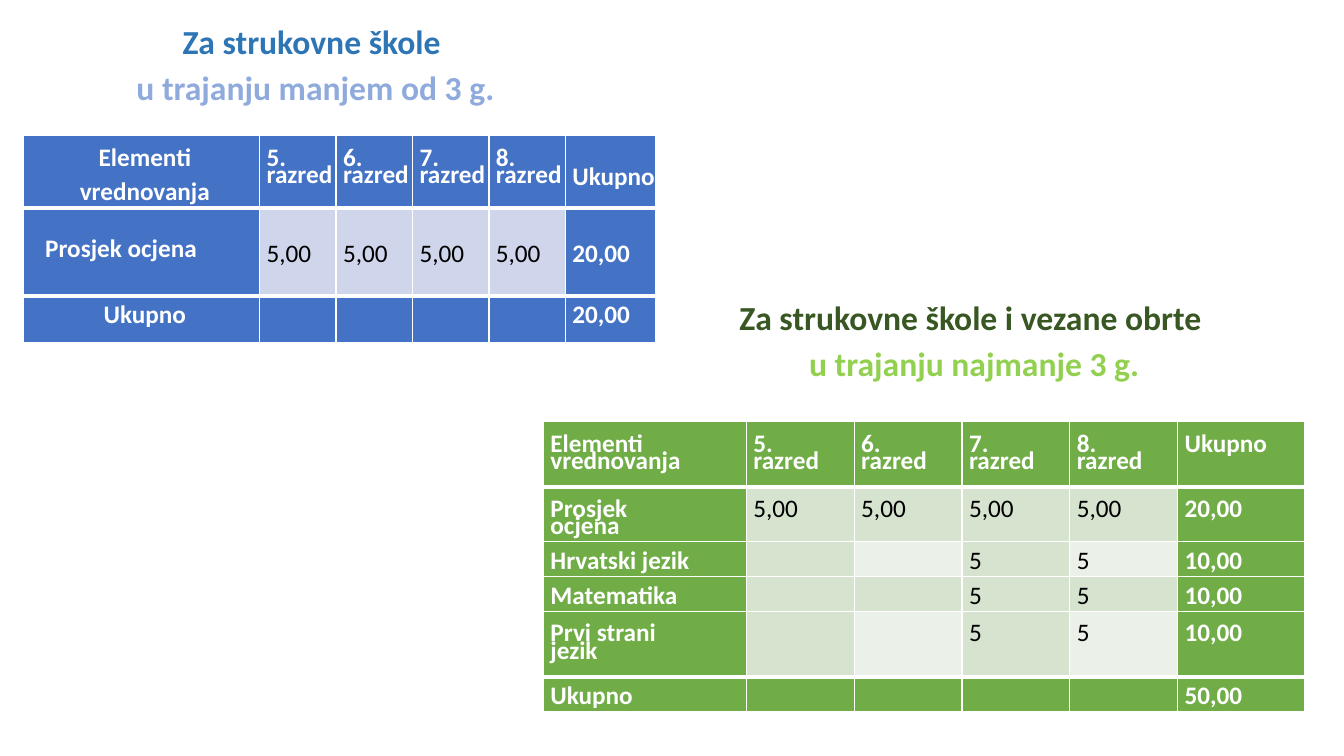
import pptx
import pptx.dml.color
import pptx.enum.text
import pptx.oxml.ns
import pptx.util
from dataclasses import dataclass
from lxml import etree

Pt = pptx.util.Pt
RGB = pptx.dml.color.RGBColor.from_string
ALIGN = pptx.enum.text.PP_ALIGN
ANCHOR = pptx.enum.text.MSO_ANCHOR
AUTOSIZE = pptx.enum.text.MSO_AUTO_SIZE
qn = pptx.oxml.ns.qn


@dataclass(frozen=True)
class Theme:
    font: str = "Calibri"
    heading_size: float = 24
    table_size: float = 18
    white: str = "FFFFFF"
    black: str = "000000"
    blue: str = "4472C4"
    blue_tint: str = "CFD5EA"
    blue_title: str = "2E75B6"
    blue_subtitle: str = "8FAADC"
    green: str = "70AD47"
    green_tint: str = "D5E3CF"
    green_pale: str = "EBF1E9"
    green_title: str = "385723"
    green_subtitle: str = "92D050"
    thin: float = 1
    thick: float = 3
    indent: float = 5
    line: float = 12.4


T = Theme()
GRADES = [f"{n}.\nrazred" for n in range(5, 9)]


def set_format(obj, values):
    for name, value in values.items():
        setattr(obj, name, value)


def add_run(p, text, size, color, bold=True):
    r = p.add_run()
    r.text = text
    set_format(r.font, {"name": T.font, "size": Pt(size), "bold": bold})
    r.font.color.rgb = RGB(color)


def fill_heading(sp, box, lines):
    """Place a body placeholder and write its (text, colour) lines."""
    set_format(sp, dict(zip(("left", "top", "width", "height"), map(Pt, box))))
    tf = sp.text_frame
    set_format(tf, {"vertical_anchor": ANCHOR.BOTTOM, "word_wrap": True,
                    "auto_size": AUTOSIZE.NONE})
    for i, (text, color) in enumerate(lines):
        p = tf.add_paragraph() if i else tf.paragraphs[0]
        set_format(p, {"alignment": ALIGN.CENTER, "line_spacing": 0.8,
                       "space_before": Pt(10)})
        add_run(p, text, T.heading_size, color)


def set_borders(cell, top, bottom):
    tcPr = cell._tc.get_or_add_tcPr()
    widths = {"a:lnL": T.thin, "a:lnR": T.thin, "a:lnT": top, "a:lnB": bottom}
    for i, (tag, width) in enumerate(widths.items()):
        ln = etree.Element(qn(tag), w=str(int(Pt(width))))
        solid = etree.SubElement(ln, qn("a:solidFill"))
        etree.SubElement(solid, qn("a:srgbClr"), val=T.white)
        tcPr.insert(i, ln)


def fill_cell(cell, text, color, bold, line, top=None, gap=0, right=0, align=ALIGN.LEFT):
    """Write the lines of a cell; line=None means single spacing."""
    set_format(cell, {"margin_left": Pt(T.indent), "margin_right": Pt(right),
                      "margin_top": Pt((top or line) if text else 0),
                      "margin_bottom": 0})
    if not text:
        return
    tf = cell.text_frame
    for i, part in enumerate(text.split("\n")):
        p = tf.add_paragraph() if i else tf.paragraphs[0]
        p.alignment = align
        spacing = T.line if i else line
        if spacing:
            p.line_spacing = Pt(spacing)
        if i and gap:
            p.space_before = Pt(gap)
        add_run(p, part, T.table_size, color, bold)


def add_score_table(s, left, top, cols, rows, main, tints, special):
    """rows holds (height, line spacing, texts); special holds cell overrides."""
    frame = s.shapes.add_table(len(rows), len(cols), Pt(left), Pt(top),
                               Pt(sum(cols)), Pt(sum(row[0] for row in rows)))
    table = frame.table
    set_format(table, {"first_row": True, "horz_banding": False})
    for column, width in zip(table.columns, cols):
        column.width = Pt(width)
    last_row, last_col = len(rows) - 1, len(cols) - 1
    for i, (height, line, texts) in enumerate(rows):
        table.rows[i].height = Pt(height)
        for j, text in enumerate(texts):
            cell = table.cell(i, j)
            inner = 0 < i < last_row and 0 < j < last_col
            # Even columns of even rows take the second tint
            pale = i % 2 == 0 and j % 2 == 0
            cell.fill.solid()
            cell.fill.fore_color.rgb = RGB(tints[pale] if inner else main)
            set_borders(cell, T.thick if i in (1, last_row) else T.thin,
                        T.thick if i in (0, last_row - 1) else T.thin)
            fmt = {"color": T.black if inner else T.white,
                   "bold": not inner, "line": line}
            fill_cell(cell, text, **{**fmt, **special.get((i, j), {})})


def main():
    prs = pptx.Presentation()
    set_format(prs, {"slide_width": Pt(960), "slide_height": Pt(540)})
    s = prs.slides.add_slide(prs.slide_layouts[4])
    holders = {sp.placeholder_format.idx: sp for sp in s.placeholders}

    # Headings use the two caption placeholders of the comparison layout
    fill_heading(holders[1], (22.3, 15.1, 406, 64.8),
                 [("Za strukovne škole ", T.blue_title),
                  ("u trajanju manjem od 3 g.", T.blue_subtitle)])
    fill_heading(holders[3], (491.8, 212.4, 408.2, 64.8),
                 [("Za strukovne škole i vezane obrte ", T.green_title),
                  ("u trajanju najmanje 3 g.", T.green_subtitle)])
    for idx in (0, 2, 4):
        holders[idx].element.getparent().remove(holders[idx].element)

    # Schools shorter than three years
    centred = {"align": ALIGN.CENTER}
    add_score_table(
        s, 16.5, 96.8, [169] + [54.6] * 4 + [64.2],
        [(51.6, 13.4, ["Elementi\nvrednovanja", *GRADES, "Ukupno"]),
         (63, None, ["Prosjek ocjena", *["5,00"] * 4, "20,00"]),
         (33.5, T.line, ["Ukupno", *[""] * 4, "20,00"])],
        T.blue, (T.blue_tint, T.blue_tint),
        {(0, 0): {**centred, "gap": T.line},
         (0, 5): {"top": 26.8},
         (1, 0): {**centred, "line": 13.5, "top": 27, "right": 34},
         **{(1, j): {"top": 22} for j in range(1, 6)},
         (2, 0): centred})

    # Schools of at least three years
    subject = ["", "", "5", "5", "10,00"]
    add_score_table(
        s, 388.2, 301, [145] + [77] * 4 + [90.7],
        [(46.8, 13.4, ["Elementi\nvrednovanja", *GRADES, "Ukupno"]),
         (39.2, 13.3, ["Prosjek\nocjena", *["5,00"] * 4, "20,00"]),
         (24.8, T.line, ["Hrvatski jezik", *subject]),
         (24.8, T.line, ["Matematika", *subject]),
         (46.8, 13.4, ["Prvi strani\njezik", *subject]),
         (24.8, T.line, ["Ukupno", *[""] * 4, "50,00"])],
        T.green, (T.green_tint, T.green_pale), {})

    prs.save("out.pptx")


if __name__ == "__main__":
    main()
